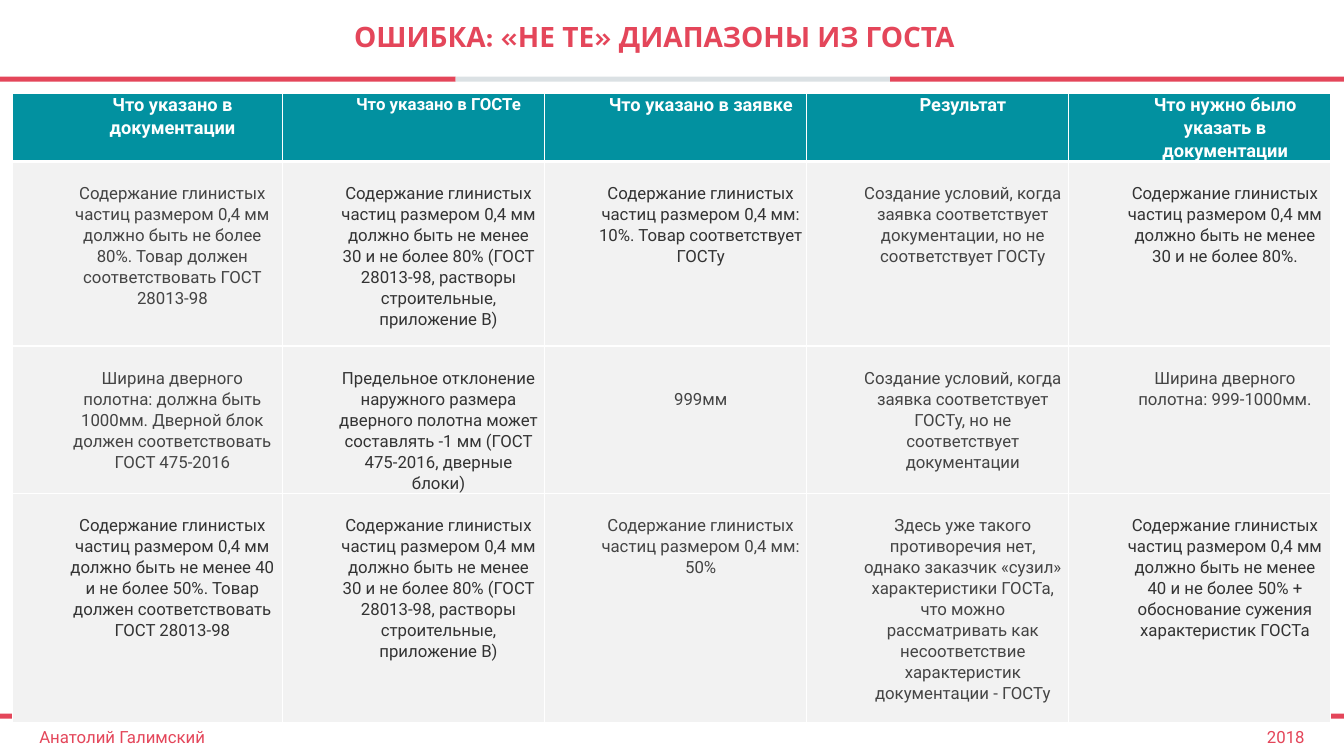
"""Builds a slide comparing wrong ranges taken from a state standard."""
from collections import namedtuple
from dataclasses import dataclass

from lxml import etree
from pptx import Presentation
from pptx import util as u
from pptx.dml.color import RGBColor
from pptx.enum import shapes, text
from pptx.oxml.ns import qn


@dataclass(frozen=True)
class Theme:
    accent: str = "E4465A"
    neutral: str = "DBE1E4"
    header: str = "0291A0"
    body: str = "F2F2F2"
    white: str = "FFFFFF"
    dark: str = "333333"
    soft: str = "444444"
    heading_font: str = "Karla"
    text_font: str = "Roboto"
    title_size: int = 20
    header_size: int = 13
    text_size: int = 12


THEME = Theme()
Entry = namedtuple("Entry", "wording color size lines_above")


def header(wording, size=THEME.header_size):
    return Entry(wording, THEME.white, size, 0)


def soft(wording, lines_above=1):
    return Entry(wording, THEME.soft, THEME.text_size, lines_above)


def dark(wording):
    return Entry(wording, THEME.dark, THEME.text_size, 1)


TITLE = "ОШИБКА: «НЕ ТЕ» ДИАПАЗОНЫ ИЗ ГОСТА"
AUTHOR = "Анатолий Галимский"
YEAR = "2018"
CLAY = "Содержание глинистых частиц размером 0,4 мм"
MORTAR_STANDARD = dark(f"{CLAY} должно быть не менее 30 и не более 80% "
                       "(ГОСТ 28013-98, растворы строительные, приложение В)")
COMPARISON = [
    [header("Что указано в документации"),
     header("Что указано в ГОСТе", THEME.text_size),
     header("Что указано в заявке"),
     header("Результат"),
     header("Что нужно было указать в документации")],
    [soft(f"{CLAY} должно быть не более 80%. "
          "Товар должен соответствовать ГОСТ 28013-98"),
     MORTAR_STANDARD,
     dark(f"{CLAY}: 10%. Товар соответствует ГОСТу"),
     soft("Создание условий, когда заявка соответствует документации, "
          "но не соответствует ГОСТу"),
     dark(f"{CLAY} должно быть не менее 30 и не более 80%.")],
    [soft("Ширина дверного полотна: должна быть 1000мм. "
          "Дверной блок должен соответствовать ГОСТ 475-2016"),
     dark("Предельное отклонение наружного размера дверного полотна "
          "может составлять -1 мм (ГОСТ 475-2016, дверные блоки)"),
     soft("999мм", lines_above=2),
     soft("Создание условий, когда заявка соответствует ГОСТу, "
          "но не соответствует документации"),
     soft("Ширина дверного полотна: 999-1000мм.")],
    [dark(f"{CLAY} должно быть не менее 40 и не более 50%. "
          "Товар должен соответствовать ГОСТ 28013-98"),
     MORTAR_STANDARD,
     soft(f"{CLAY}: 50%"),
     soft("Здесь уже такого противоречия нет, однако заказчик «сузил» "
          "характеристики ГОСТа, что можно рассматривать как несоответствие "
          "характеристик документации - ГОСТу"),
     dark(f"{CLAY} должно быть не менее 40 и не более 50% + "
          "обоснование сужения характеристик ГОСТа")],
]

WIDTH, HEIGHT = 13.33, 7.5
RULE_TOPS = (0.76, 7.08)
RULE_HEIGHT = 0.05
RULE_PARTS = [(4.52, THEME.accent), (4.31, THEME.neutral), (4.5, THEME.accent)]
TABLE_LEFT, TABLE_TOP = 0.12, 0.93
COLUMNS = [2.68] + [2.6] * 4
ROWS = [0.66, 1.83, 1.45, 2.27]
LINE_HEIGHT = 0.21
LINE_SPACING = 1.07
CELL_MARGIN = 0.04
INDENT = 0.5
FOOTER_TOP, FOOTER_HEIGHT = 7.13, 0.36


def style(paragraph, font_name, size, color, bold, align):
    paragraph.alignment = align
    for run in paragraph.runs:
        run.font.name = font_name
        run.font.size = u.Pt(size)
        run.font.bold = bold
        run.font.color.rgb = RGBColor.from_string(color)


def add_label(slide, wording, place, font_name, size, bold, align):
    label = slide.shapes.add_textbox(*map(u.Inches, place)).text_frame
    label.margin_left = label.margin_right = 0
    label.margin_top = label.margin_bottom = 0
    label.word_wrap = True
    label.vertical_anchor = text.MSO_ANCHOR.MIDDLE
    label.text = wording
    style(label.paragraphs[0], font_name, size, THEME.accent, bold, align)
    return label


def add_rules(slide):
    for top in RULE_TOPS:
        left = 0
        for width, color in RULE_PARTS:
            rule = slide.shapes.add_shape(
                shapes.MSO_SHAPE.RECTANGLE,
                *map(u.Inches, (left, top, width, RULE_HEIGHT)))
            rule.shadow.inherit = False
            rule.fill.solid()
            rule.fill.fore_color.rgb = RGBColor.from_string(color)
            rule.line.fill.background()
            left += width


def add_borders(cell, row):
    properties = cell._tc.get_or_add_tcPr()
    widths = {"a:lnL": 1, "a:lnR": 1,
              "a:lnT": 3 if row == 1 else 1,
              "a:lnB": 3 if row == 0 else 1}
    for side, width in widths.items():
        border = etree.SubElement(properties, qn(side), w=str(u.Pt(width)))
        fill = etree.SubElement(border, qn("a:solidFill"))
        etree.SubElement(fill, qn("a:srgbClr"), val=THEME.white)


def fill_cell(cell, entry, row):
    add_borders(cell, row)
    cell.fill.solid()
    cell.fill.fore_color.rgb = RGBColor.from_string(
        THEME.body if row else THEME.header)
    cell.margin_left = cell.margin_right = u.Inches(CELL_MARGIN)
    cell.margin_top = u.Inches(entry.lines_above * LINE_HEIGHT)
    cell.margin_bottom = 0
    cell.text_frame.text = entry.wording
    paragraph = cell.text_frame.paragraphs[0]
    paragraph.line_spacing = LINE_SPACING
    paragraph._p.get_or_add_pPr().set("marL", str(u.Inches(INDENT)))
    style(paragraph, THEME.text_font, entry.size, entry.color,
          row == 0, text.PP_ALIGN.CENTER)


def add_comparison(slide):
    place = (TABLE_LEFT, TABLE_TOP, sum(COLUMNS), sum(ROWS))
    table = slide.shapes.add_table(
        len(ROWS), len(COLUMNS), *map(u.Inches, place)).table
    for column, width in zip(table.columns, COLUMNS):
        column.width = u.Inches(width)
    for row, height in enumerate(ROWS):
        table.rows[row].height = u.Inches(height)
        for column, entry in enumerate(COMPARISON[row]):
            fill_cell(table.cell(row, column), entry, row)


def main():
    deck = Presentation()
    deck.slide_width, deck.slide_height = u.Inches(WIDTH), u.Inches(HEIGHT)
    slide = deck.slides.add_slide(deck.slide_layouts[6])
    add_rules(slide)
    add_comparison(slide)
    title = add_label(slide, TITLE, (1.97, 0, 9.04, RULE_TOPS[0]),
                      THEME.heading_font, THEME.title_size, True,
                      text.PP_ALIGN.CENTER)
    title.paragraphs[0].line_spacing = 0.9
    for wording, left, width, align in (
            (AUTHOR, 0.39, 8.43, text.PP_ALIGN.LEFT),
            (YEAR, 9.94, 3, text.PP_ALIGN.RIGHT)):
        add_label(slide, wording, (left, FOOTER_TOP, width, FOOTER_HEIGHT),
                  THEME.text_font, THEME.text_size, False, align)
    deck.save("out.pptx")


if __name__ == "__main__":
    main()
